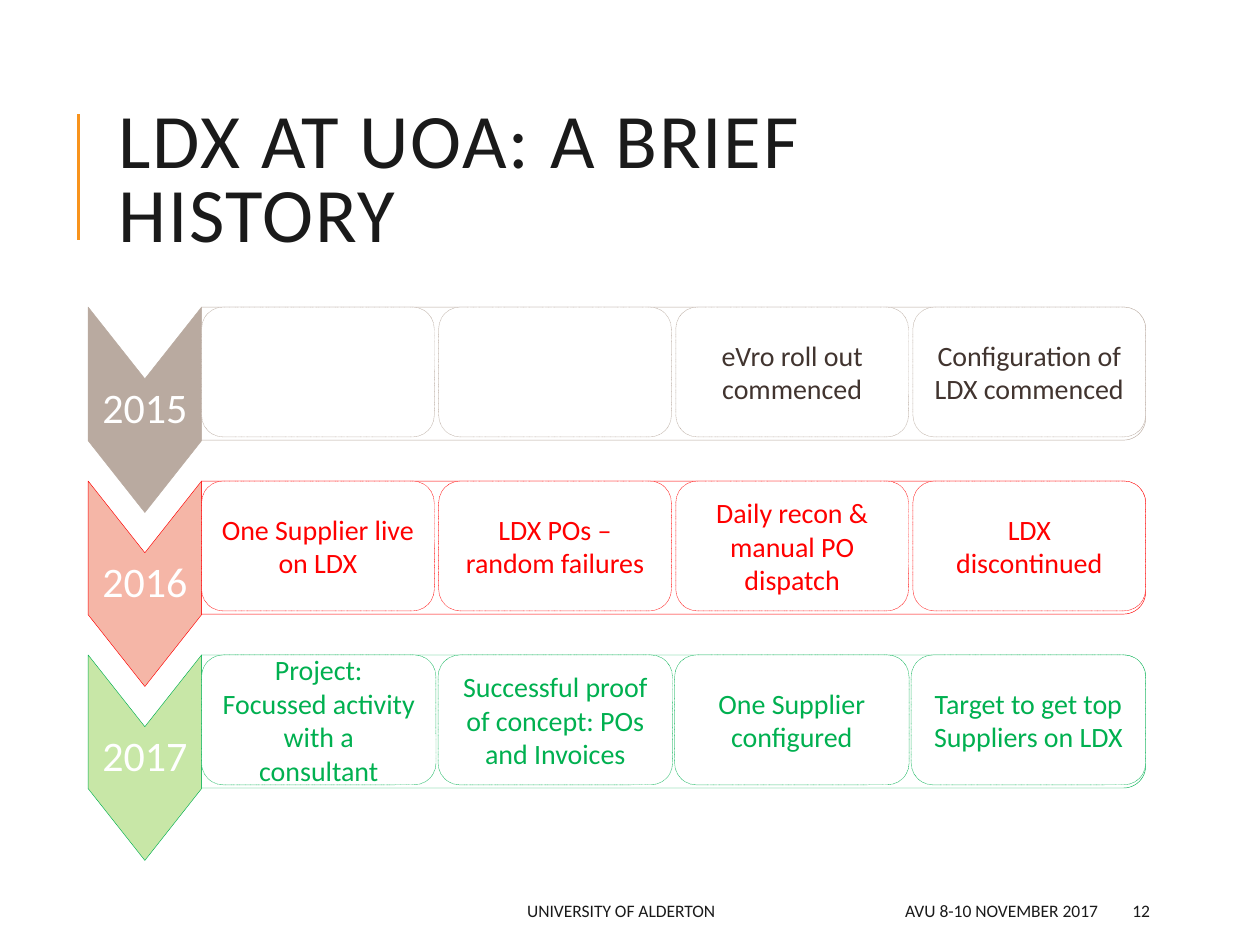
from dataclasses import dataclass

from lxml import etree
from pptx import Presentation
from pptx.dml.color import RGBColor
from pptx.enum.dml import MSO_LINE
from pptx.enum.shapes import MSO_CONNECTOR, MSO_SHAPE
from pptx.enum.text import MSO_ANCHOR, MSO_AUTO_SIZE, PP_ALIGN
from pptx.oxml.ns import qn
from pptx.util import Pt

LEFT, CENTER, RIGHT = PP_ALIGN.LEFT, PP_ALIGN.CENTER, PP_ALIGN.RIGHT
MIDDLE = MSO_ANCHOR.MIDDLE
NO_AUTOFIT = MSO_AUTO_SIZE.NONE
DOTTED = MSO_LINE.ROUND_DOT
STRAIGHT = MSO_CONNECTOR.STRAIGHT
ROUNDED = MSO_SHAPE.ROUNDED_RECTANGLE
ROUNDED_TOP = MSO_SHAPE.ROUND_2_SAME_RECTANGLE
TITLE_ONLY = 5


@dataclass(frozen=True)
class Theme:
    font: str = "Calibri"
    ink: str = "1A1A1A"
    white: str = "FFFFFF"
    accent: str = "F8931D"
    brown: str = "41342F"
    taupe: str = "B9AAA0"
    red: str = "FF0000"
    salmon: str = "F5B6A7"
    green: str = "00B050"
    lime: str = "92D050"
    title_size: float = 44
    year_size: float = 24
    step_size: float = 16
    footer_size: float = 10
    hairline: float = 0.25


THEME = Theme()


@dataclass(frozen=True)
class Year:
    label: str
    fill: str
    outline: str
    ink: str
    steps: tuple
    gap: float = 2.5
    opacity: int = 100


YEARS = (
    Year("2015", THEME.taupe, THEME.taupe, THEME.brown,
         ("", "", "eVro roll out commenced", "Configuration of LDX commenced")),
    Year("2016", THEME.salmon, THEME.red, THEME.red,
         ("One Supplier live on LDX", "LDX POs – random failures",
          "Daily recon & manual PO dispatch", "LDX discontinued")),
    Year("2017", THEME.lime, THEME.green, THEME.green,
         ("Project: Focussed activity with a\vconsultant",
          "Successful proof of concept: POs and Invoices",
          "One Supplier configured", "Target to get top Suppliers on LDX"),
         gap=1.2, opacity=50),
)

# Timeline grid, in points
ROW_TOP, ROW_PITCH = 175.5, 99.4
ARROW_LEFT, ARROW_WIDTH, ARROW_HEIGHT, ARROW_NOTCH = 50.4, 64.8, 117.4, 41
PANEL_LEFT, PANEL_WIDTH, PANEL_HEIGHT = 115.2, 539.5, 76
STEP_HEIGHT = 74.2


def apply(target, formats):
    for attribute, value in formats.items():
        setattr(target, attribute, value)


def box(left, top, width, height):
    return [Pt(value) for value in (left, top, width, height)]


def write(shape, text, size, color, align=CENTER, spacing=None, **frame_formats):
    frame = shape.text_frame
    apply(frame, {"word_wrap": True, "auto_size": NO_AUTOFIT,
                  "vertical_anchor": MIDDLE, **frame_formats})
    frame.text = text
    paragraph = frame.paragraphs[0]
    apply(paragraph, {"alignment": align, "line_spacing": spacing})
    for run in paragraph.runs:
        apply(run.font, {"name": THEME.font, "size": Pt(size)})
        run.font.color.rgb = RGBColor.from_string(color)
    return paragraph


def paint(shape, fill, outline, opacity=100, dash=None):
    shape.shadow.inherit = False
    shape.fill.solid()
    shape.fill.fore_color.rgb = RGBColor.from_string(fill)
    shape.line.color.rgb = RGBColor.from_string(outline)
    apply(shape.line, {"width": Pt(THEME.hairline), "dash_style": dash})
    if opacity < 100:
        color = shape.fill._xPr.find(qn("a:solidFill"))[0]
        etree.SubElement(color, qn("a:alpha"), val=str(opacity * 1000))


def add_title(slide):
    title = slide.shapes.title
    left, top, width, height = box(60.5, 46, 574, 118)
    apply(title, {"left": left, "top": top, "width": width, "height": height})
    heading = write(title, "LDX AT UOA: A BRIEF HISTORY", THEME.title_size,
                    THEME.ink, LEFT, 0.8)
    # Letter spacing of one point
    heading.runs[0].font._element.set("spc", "100")


def add_title_rule(slide):
    rule = slide.shapes.add_connector(STRAIGHT, Pt(44.8), Pt(137), Pt(44.8), Pt(65))
    rule.line.color.rgb = RGBColor.from_string(THEME.accent)
    rule.line.width = Pt(1.5)
    etree.SubElement(rule._element.spPr, qn("a:effectLst"))


def add_year_arrow(slide, year, top):
    right, middle = ARROW_LEFT + ARROW_WIDTH, ARROW_LEFT + ARROW_WIDTH / 2
    bottom = top + ARROW_HEIGHT
    shoulder = bottom - ARROW_NOTCH
    outline = slide.shapes.build_freeform(Pt(right), Pt(top))
    corners = ((right, shoulder), (middle, bottom), (ARROW_LEFT, shoulder),
               (ARROW_LEFT, top), (middle, top + ARROW_NOTCH))
    outline.add_line_segments([(Pt(x), Pt(y)) for x, y in corners], close=True)
    arrow = outline.convert_to_shape()
    paint(arrow, year.fill, year.outline, year.opacity)
    write(arrow, year.label, THEME.year_size, THEME.white, spacing=0.9,
          margin_left=Pt(1.5), margin_right=Pt(1.5),
          margin_top=Pt(37.5), margin_bottom=Pt(37.5))


def add_year_panel(slide, year, top):
    # A quarter turn puts the rounded corners on the right
    shift = (PANEL_WIDTH - PANEL_HEIGHT) / 2
    panel = slide.shapes.add_shape(
        ROUNDED_TOP, *box(PANEL_LEFT + shift, top - shift, PANEL_HEIGHT, PANEL_WIDTH))
    panel.rotation = 90
    paint(panel, THEME.white, year.outline, opacity=90)


def add_steps(slide, year, top):
    count = len(year.steps)
    width = (PANEL_WIDTH - (count - 1) * year.gap) / count
    for column, text in enumerate(year.steps):
        left = PANEL_LEFT + column * (width + year.gap)
        step = slide.shapes.add_shape(ROUNDED, *box(left, top, width, STEP_HEIGHT))
        paint(step, THEME.white, year.outline, dash=DOTTED)
        if text:
            write(step, text, THEME.step_size, year.ink)


def add_footer_text(slide, text, left, width, align, tab_stops=()):
    footer = slide.shapes.add_textbox(*box(left, 509.5, width, 21.6))
    line = write(footer, text, THEME.footer_size, THEME.ink, align)
    if tab_stops:
        tabs = etree.SubElement(line._p.get_or_add_pPr(), qn("a:tabLst"))
        for stop in tab_stops:
            etree.SubElement(tabs, qn("a:tab"), pos=str(Pt(stop)), algn="l")


def main():
    deck = Presentation()
    apply(deck, {"slide_width": Pt(720), "slide_height": Pt(540)})
    slide = deck.slides.add_slide(deck.slide_layouts[TITLE_ONLY])

    # Heading
    add_title_rule(slide)
    add_title(slide)

    # Timeline: arrows and panels behind, steps in front
    rows = [(year, ROW_TOP + index * ROW_PITCH) for index, year in enumerate(YEARS)]
    for year, top in rows:
        add_year_arrow(slide, year, top)
        add_year_panel(slide, year, top)
    for year, top in rows:
        add_steps(slide, year, top)

    # Footer
    add_footer_text(slide, "UNIVERSITY OF ALDERTON\t\tAVU 8-10 NOVEMBER 2017",
                    286, 348.5, RIGHT, tab_stops=(144, 216))
    add_footer_text(slide, "12", 640, 57.6, LEFT)

    deck.save("out.pptx")


if __name__ == "__main__":
    main()
